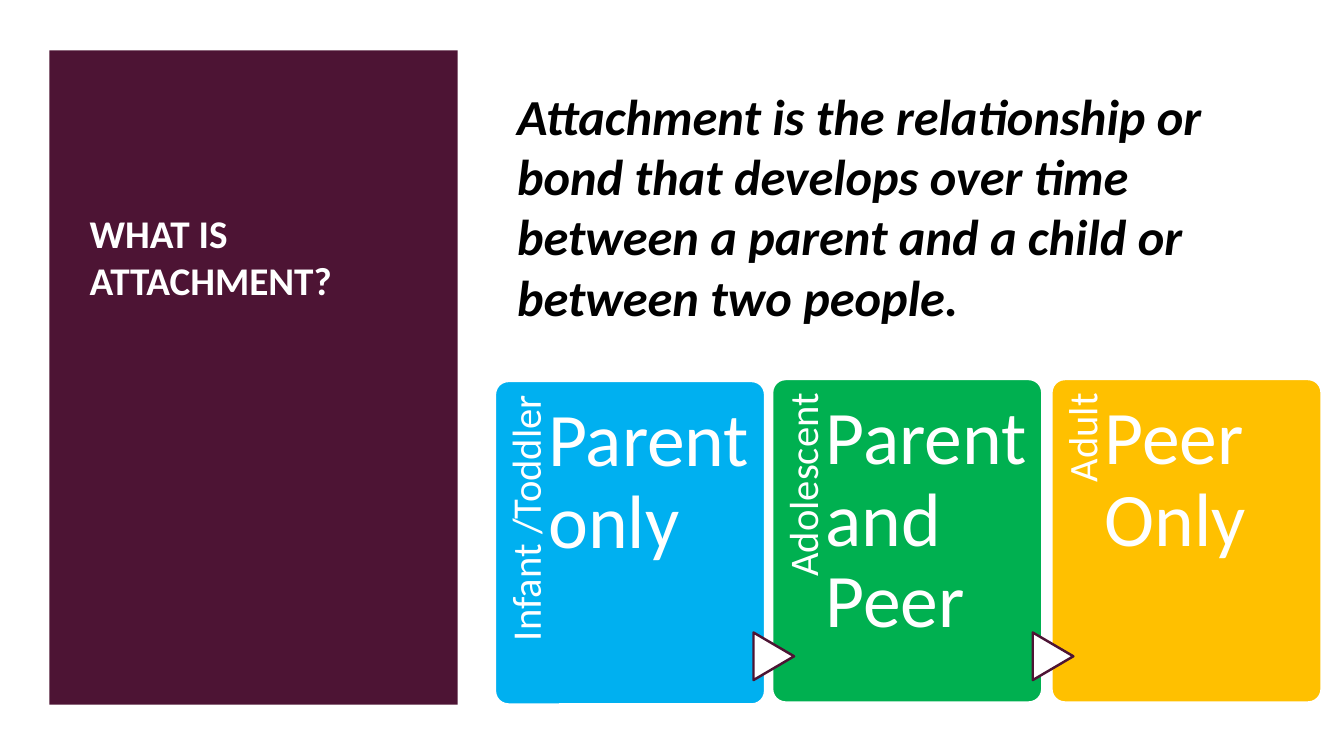
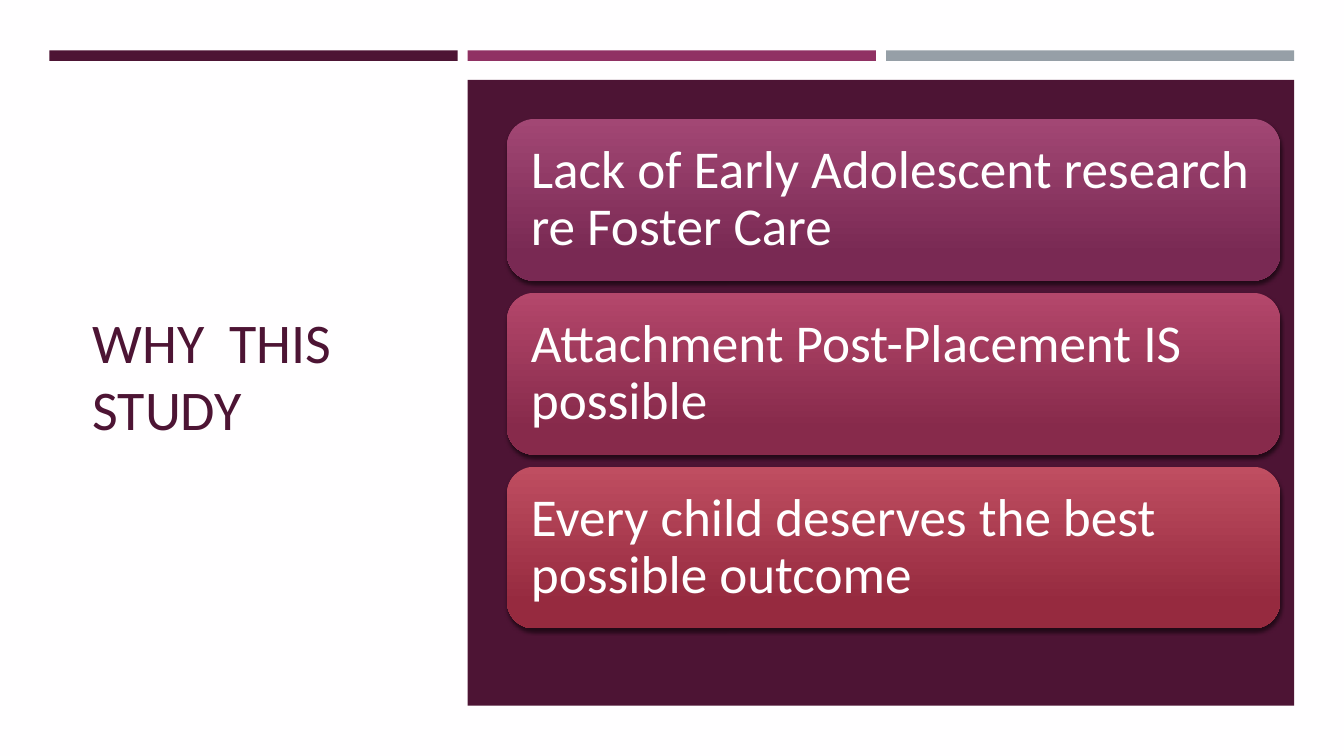
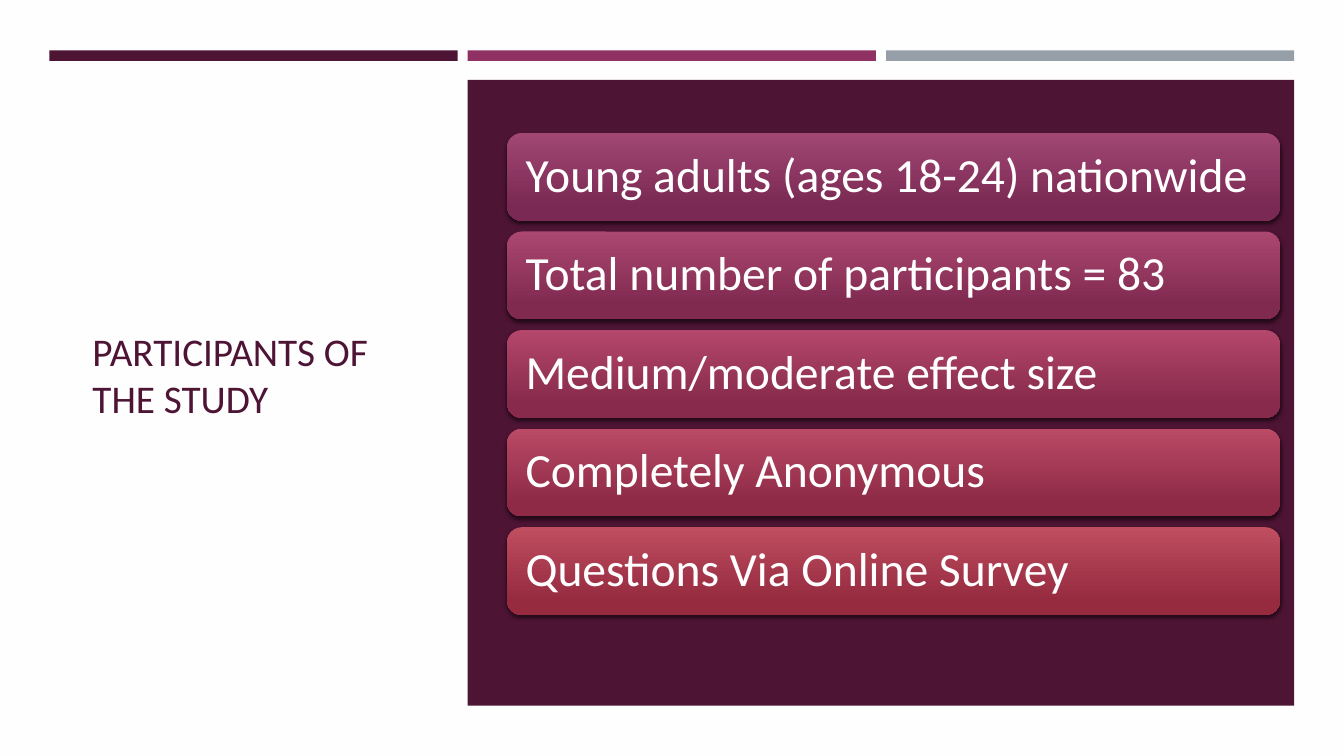
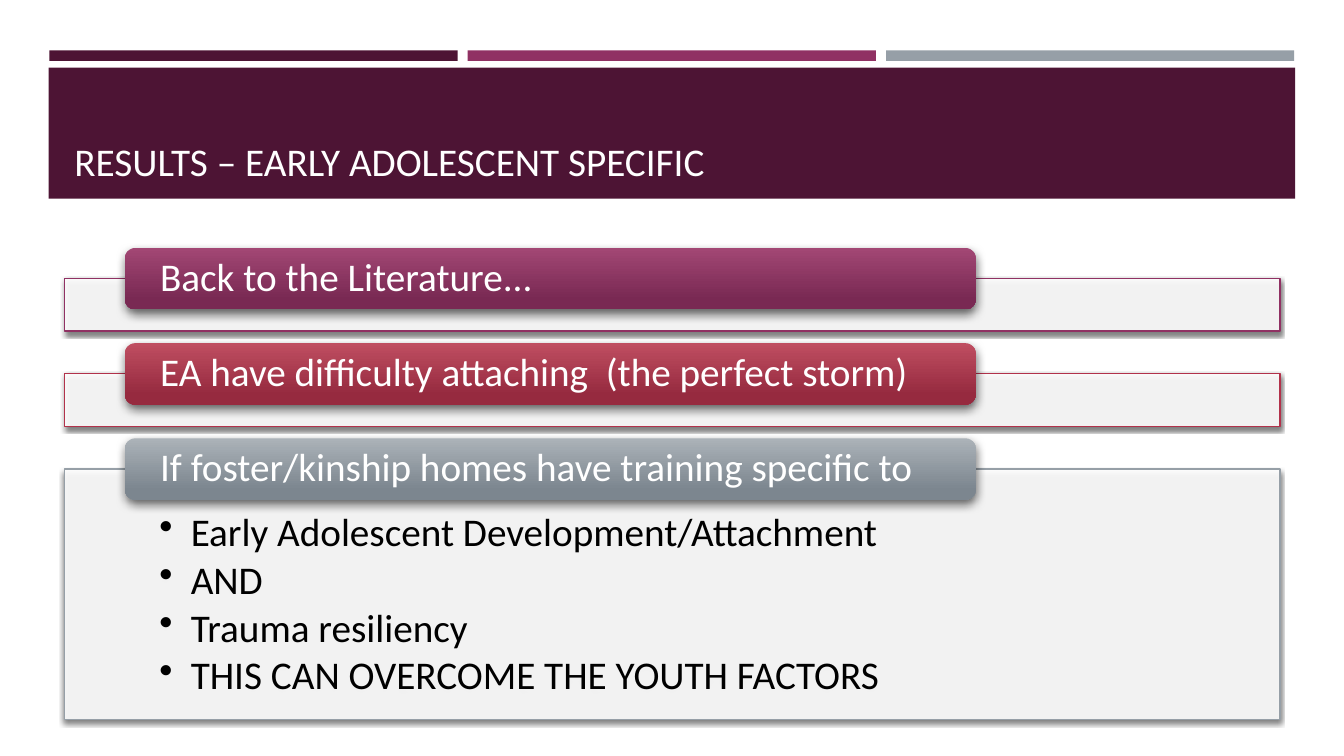
from dataclasses import dataclass
from typing import Any, NamedTuple, Optional, Union

from lxml.etree import SubElement
from pptx import Presentation
from pptx.dml.color import RGBColor
from pptx.enum.shapes import MSO_SHAPE as Kind
from pptx.enum.text import MSO_ANCHOR as Anchor, PP_ALIGN as Align
from pptx.oxml.ns import qn
from pptx.util import Pt

FONT = "Calibri"
PLUM, MAGENTA, CRIMSON, GREY = "4D1434", "903163", "B2324B", "969FA7"
WHITE, OFF_WHITE, BLACK = "FFFFFF", "FFFEFF", "000000"

BAR_LEFT, BAR_WIDTH, BAR_PITCH = 35.3, 291.6, 298.8
BAR_TOP, BAR_HEIGHT = 36, 7.6


class Box(NamedTuple):
    left: float
    top: float
    width: float
    height: float


class Gradient(NamedTuple):
    start: str
    end: str


class Shadow(NamedTuple):
    blur: float
    distance: float
    angle: int
    opacity: int


class Insets(NamedTuple):
    left: float = 7.2
    top: float = 3.6
    right: float = 7.2
    bottom: float = 3.6


@dataclass(frozen=True)
class TextStyle:
    size: float
    color: str = WHITE
    bold: bool = False
    italic: bool = False
    align: Align = Align.LEFT
    anchor: Anchor = Anchor.TOP
    spacing: float = 1.0
    after: float = 0
    insets: Insets = Insets()
    bullet_indent: float = 0


class Stage(NamedTuple):
    age: str
    bond: str
    color: str
    left: float
    top: float


class Finding(NamedTuple):
    heading: str
    gradient: Gradient
    outline: str
    panel_height: float
    details: tuple[str, ...] = ()


SOFT_SHADOW = Shadow(3, 2, 90, 55)
DEEP_SHADOW = Shadow(7, 3, 84, 60)

PURPLE_FADE = Gradient("A24774", "792953")
ROSE_FADE = Gradient("B4476B", "872A4B")
RED_FADE = Gradient("BF4E61", "962A3F")
GREY_FADE = Gradient("ABB2B8", "7C868F")

STAGES = (
    Stage("Infant /Toddler", "Parent only", "00B0F0", 353.5, 272.1),
    Stage("Adolescent", "Parent and Peer", "00B050", 551.5, 270.7),
    Stage("Adult", "Peer Only", "FFC000", 751, 270.7),
)
REASONS = (
    ("Lack of Early Adolescent research re Foster Care", PURPLE_FADE),
    ("Attachment Post-Placement IS possible", ROSE_FADE),
    ("Every child deserves the best possible outcome", RED_FADE),
)
PARTICIPANT_FACTS = (
    ("Young adults (ages 18-24) nationwide", PURPLE_FADE),
    ("Total number of participants = 83", Gradient("AB4770", "802A50")),
    ("Medium/moderate effect size", ROSE_FADE),
    ("Completely Anonymous", Gradient("BA4A66", "8E2A46")),
    ("Questions Via Online Survey", RED_FADE),
)
FINDINGS = (
    Finding("Back to the Literature...", PURPLE_FADE, MAGENTA, 37.6),
    Finding("EA have difficulty attaching  (the perfect storm)", RED_FADE, CRIMSON, 37.6),
    Finding(
        "If foster/kinship homes have training specific to", GREY_FADE, GREY, 179.2,
        (
            "Early Adolescent Development/Attachment",
            "AND",
            "Trauma resiliency",
            "THIS CAN OVERCOME THE YOUTH FACTORS",
        ),
    ),
)


def rgb(code: str) -> RGBColor:
    return RGBColor.from_string(code)


def assign(target: Any, values: dict[str, Any]) -> None:
    for name, value in values.items():
        setattr(target, name, value)


def place(box: Box) -> tuple:
    return tuple(Pt(length) for length in box)


def write(frame: Any, lines: tuple[str, ...], style: TextStyle) -> None:
    assign(frame, {"word_wrap": True, "vertical_anchor": style.anchor})
    assign(frame, {f"margin_{side}": Pt(gap) for side, gap in style.insets._asdict().items()})
    for index, line in enumerate(lines):
        paragraph = frame.add_paragraph() if index else frame.paragraphs[0]
        assign(paragraph, {
            "alignment": style.align,
            "line_spacing": style.spacing,
            "space_after": Pt(style.after),
        })
        run = paragraph.add_run()
        run.text = line
        assign(run.font, {
            "name": FONT, "size": Pt(style.size), "bold": style.bold, "italic": style.italic,
        })
        run.font.color.rgb = rgb(style.color)
        if style.bullet_indent:
            properties = paragraph._p.get_or_add_pPr()
            properties.set("marL", str(Pt(style.bullet_indent)))
            properties.set("indent", str(-Pt(style.bullet_indent)))
            SubElement(properties, qn("a:buChar")).set("char", "•")


def add_text(slide: Any, box: Box, text: str, style: TextStyle, rotation: float = 0) -> None:
    label = slide.shapes.add_textbox(*place(box))
    label.rotation = rotation
    write(label.text_frame, (text,), style)


def cast_shadow(shape: Any, shadow: Shadow) -> None:
    effects = shape.element.spPr.find(qn("a:effectLst"))
    outer = SubElement(effects, qn("a:outerShdw"), {
        "blurRad": str(Pt(shadow.blur)),
        "dist": str(Pt(shadow.distance)),
        "dir": str(shadow.angle * 60000),
        "algn": "ctr",
        "rotWithShape": "0",
    })
    tint = SubElement(outer, qn("a:srgbClr"), {"val": BLACK})
    SubElement(tint, qn("a:alpha"), {"val": str(shadow.opacity * 1000)})


def add_block(
    slide: Any,
    box: Box,
    fill: Union[str, Gradient],
    kind: Kind = Kind.RECTANGLE,
    outline: Optional[str] = None,
    weight: float = 1.75,
    shadow: Optional[Shadow] = None,
    opacity: int = 100,
) -> Any:
    block = slide.shapes.add_shape(kind, *place(box))
    block.shadow.inherit = False
    if isinstance(fill, Gradient):
        block.fill.gradient()
        block.fill.gradient_angle = 270
        for stop, color, position in zip(block.fill.gradient_stops, fill, (0, 0.84)):
            stop.color.rgb = rgb(color)
            stop.position = position
    else:
        block.fill.solid()
        block.fill.fore_color.rgb = rgb(fill)
    if opacity < 100:
        tint = block.element.spPr.find(qn("a:solidFill")).find(qn("a:srgbClr"))
        SubElement(tint, qn("a:alpha"), {"val": str(opacity * 1000)})
    if outline:
        block.line.color.rgb = rgb(outline)
        block.line.width = Pt(weight)
    else:
        block.line.fill.background()
    if shadow:
        cast_shadow(block, shadow)
    return block


def new_slide(deck: Any, background: str) -> Any:
    slide = deck.slides.add_slide(deck.slide_layouts[6])
    slide.background.fill.solid()
    slide.background.fill.fore_color.rgb = rgb(background)
    return slide


def add_top_bars(slide: Any) -> None:
    for column, color in enumerate((PLUM, MAGENTA, GREY)):
        left = BAR_LEFT + column * BAR_PITCH
        add_block(slide, Box(left, BAR_TOP, BAR_WIDTH, BAR_HEIGHT), color)


def add_stage(slide: Any, stage: Stage, follows: bool) -> None:
    card = add_block(
        slide, Box(stage.left, stage.top, 193, 231.1), stage.color,
        Kind.ROUNDED_RECTANGLE, WHITE,
    )
    card.adjustments[0] = 0.05
    write(card.text_frame, (stage.bond,),
          TextStyle(54, spacing=0.9, insets=Insets(35.4, 11.6, 4, 0)))
    add_text(
        slide, Box(stage.left - 75.6, stage.top + 75.6, 190, 38.9), stage.age,
        TextStyle(29, align=Align.RIGHT, spacing=0.9, insets=Insets(0, 7.9, 10, 0)), 270,
    )
    if follows:
        arrow = add_block(
            slide, Box(stage.left - 15.8, stage.top + 183.6, 34, 29), WHITE,
            Kind.FLOWCHART_EXTRACT, PLUM,
        )
        arrow.rotation = 90


def attachment_slide(deck: Any) -> None:
    slide = new_slide(deck, WHITE)
    add_block(slide, Box(BAR_LEFT, BAR_TOP, BAR_WIDTH, 467.3), PLUM)
    add_text(slide, Box(57, 146.2, 252, 75), "WHAT IS ATTACHMENT?", TextStyle(28, bold=True))
    add_text(
        slide, Box(362.2, 56.9, 581.8, 181.4),
        "Attachment is the relationship or bond that develops over time "
        "between a parent and a child or between two people.",
        TextStyle(36, BLACK, bold=True, italic=True),
    )
    for index, stage in enumerate(STAGES):
        add_stage(slide, stage, index > 0)


def card_list_slide(
    deck: Any, title: str, title_size: float, cards: tuple, card_size: float,
    top: float, height: float, pitch: float,
) -> None:
    slide = new_slide(deck, OFF_WHITE)
    add_text(slide, Box(59, 82.1, 240.5, 370.8), title,
             TextStyle(title_size, PLUM, anchor=Anchor.MIDDLE))
    add_top_bars(slide)
    add_block(slide, Box(BAR_LEFT + BAR_PITCH, 57, 590.4, 447), PLUM)
    style = TextStyle(card_size, anchor=Anchor.MIDDLE, spacing=0.9,
                      insets=Insets(*[card_size * 0.3] * 4))
    for row, (text, gradient) in enumerate(cards):
        card = add_block(
            slide, Box(362.2, top + row * pitch, 552.2, height), gradient,
            Kind.ROUNDED_RECTANGLE, shadow=SOFT_SHADOW,
        )
        write(card.text_frame, (text,), style)


def results_slide(deck: Any) -> None:
    slide = new_slide(deck, WHITE)
    add_block(slide, Box(34.8, 48.4, 890.4, 93.6), PLUM)
    add_text(slide, Box(46.1, 55.4, 868.3, 79.9), "RESULTS – EARLY ADOLESCENT SPECIFIC",
             TextStyle(28, anchor=Anchor.BOTTOM))
    add_top_bars(slide)
    heading_style = TextStyle(28, anchor=Anchor.MIDDLE, spacing=0.9, insets=Insets(23, 0, 23, 0))
    detail_style = TextStyle(28, BLACK, spacing=0.9, after=4,
                             insets=Insets(67.7, 31, 67.7, 15.8), bullet_indent=22.5)
    for row, finding in enumerate(FINDINGS):
        top = 177.1 + row * 68
        panel = add_block(
            slide, Box(46.1, top + 21.8, 868.3, finding.panel_height), WHITE,
            outline=finding.outline, weight=1, shadow=SOFT_SHADOW, opacity=90,
        )
        write(panel.text_frame, finding.details, detail_style)
        heading = add_block(
            slide, Box(89.3, top, 607.7, 43.9), finding.gradient,
            Kind.ROUNDED_RECTANGLE, shadow=DEEP_SHADOW,
        )
        write(heading.text_frame, (finding.heading,), heading_style)


def main() -> None:
    deck = Presentation()
    assign(deck, {"slide_width": Pt(960), "slide_height": Pt(540)})
    attachment_slide(deck)
    card_list_slide(deck, "WHY  THIS STUDY", 40, REASONS, 38, 85, 115.5, 124.2)
    card_list_slide(deck, "PARTICIPANTS OF THE STUDY", 28, PARTICIPANT_FACTS, 34, 95, 62.7, 70.4)
    results_slide(deck)
    deck.save("out.pptx")


if __name__ == "__main__":
    main()
